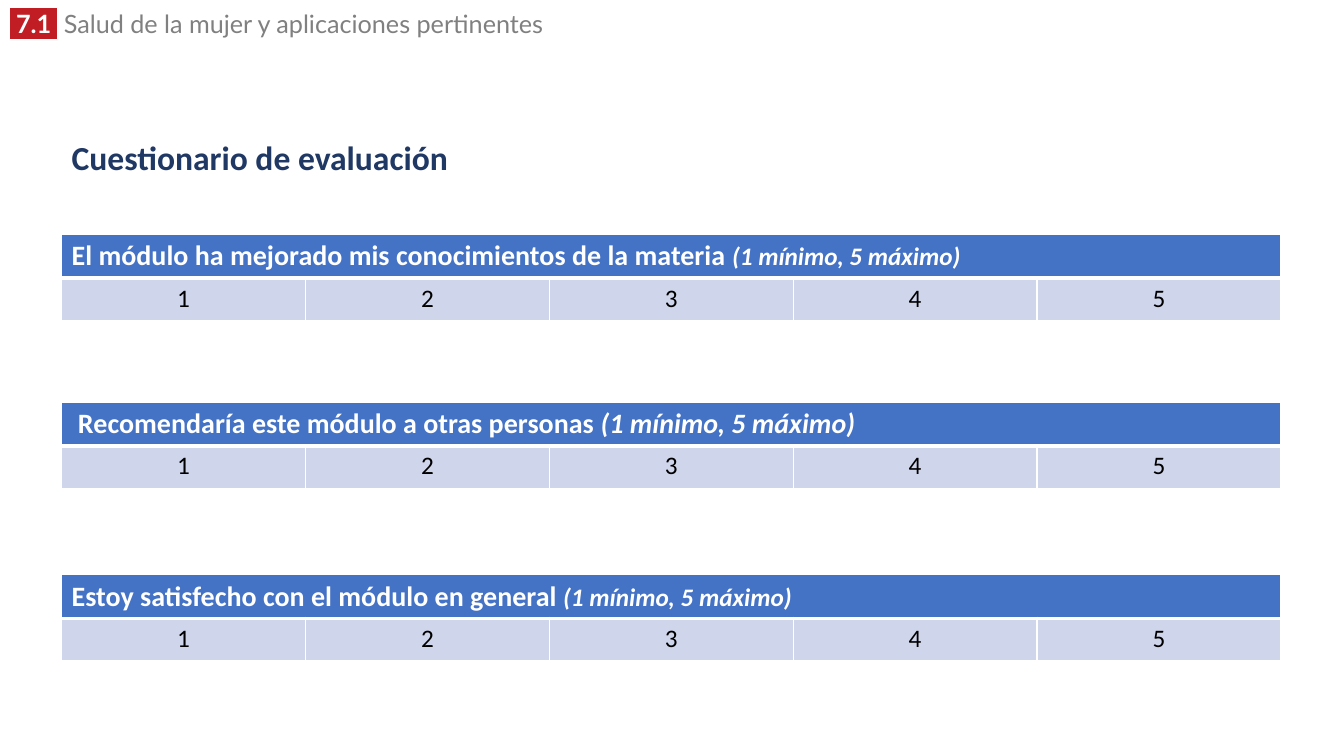
import pptx
import pptx.util
import pptx.dml.color
import pptx.enum.text
import pptx.oxml
import pptx.oxml.ns

Pt = pptx.util.Pt
RGBColor = pptx.dml.color.RGBColor
PP_ALIGN = pptx.enum.text.PP_ALIGN
MSO_ANCHOR = pptx.enum.text.MSO_ANCHOR
MSO_AUTO_SIZE = pptx.enum.text.MSO_AUTO_SIZE

COLORS = {
    "white": "FFFFFF",
    "red": "C01E24",
    "gray": "808080",
    "navy": "203864",
    "blue": "4472C4",
    "pale": "CFD5EA",
    "black": "000000",
}
LEFT, WIDTH = 44, 871
ROW_HEIGHT = 30.24
SCALE = ["1", "2", "3", "4", "5"]
RANGE_HINT = "(1 mínimo, 5 máximo)"
# statement, top, size of the range hint
QUESTIONS = [
    ("El módulo ha mejorado mis conocimientos de la materia ", 167.3, 18),
    (" Recomendaría este módulo a otras personas ", 287.3, 20),
    ("Estoy satisfecho con el módulo en general ", 410.5, 18),
]


def add_run(paragraph, text, size, color, font="Calibri", bold=False, italic=False):
    run = paragraph.add_run()
    run.text = text
    run.font.size = Pt(size)
    run.font.color.rgb = RGBColor.from_string(COLORS[color])
    run.font.name = font
    run.font.bold = bold
    run.font.italic = italic
    return run


def style_cell(cell, color, bottom_width):
    """Fill the cell and give it white borders."""
    cell.fill.solid()
    cell.fill.fore_color.rgb = RGBColor.from_string(COLORS[color])
    properties = cell._tc.get_or_add_tcPr()
    for position, side in enumerate("LRTB"):
        width = Pt(bottom_width if side == "B" else 1)
        properties.insert(position, pptx.oxml.parse_xml(
            f'<a:ln{side} {pptx.oxml.ns.nsdecls("a")} w="{width}"><a:solidFill>'
            f'<a:srgbClr val="{COLORS["white"]}"/></a:solidFill></a:ln{side}>'))


presentation = pptx.Presentation()
presentation.slide_width = Pt(960)
presentation.slide_height = Pt(540)
slide = presentation.slides.add_slide(presentation.slide_layouts[5])

# Section header
header = slide.shapes.add_textbox(Pt(0), Pt(6.5), Pt(453), Pt(25))
header.text_frame.word_wrap = True
paragraph = header.text_frame.paragraphs[0]
paragraph.line_spacing = 0.8
number = add_run(paragraph, " 7.1 ", 18, "white", "Lato", bold=True)
add_run(paragraph, " Salud de la mujer y aplicaciones pertinentes", 18, "gray", "Lato")
text_fill = number._r.rPr.find(pptx.oxml.ns.qn("a:solidFill"))
text_fill.addnext(pptx.oxml.parse_xml(
    f'<a:highlight {pptx.oxml.ns.nsdecls("a")}><a:srgbClr val="{COLORS["red"]}"/></a:highlight>'))

# Title
title = slide.shapes.title
title.left, title.top, title.width, title.height = Pt(LEFT), Pt(85), Pt(WIDTH), Pt(57.6)
title.text_frame.word_wrap = True
title.text_frame.auto_size = MSO_AUTO_SIZE.NONE
title.text_frame.vertical_anchor = MSO_ANCHOR.MIDDLE
paragraph = title.text_frame.paragraphs[0]
paragraph.alignment = PP_ALIGN.LEFT
paragraph.line_spacing = 0.9
add_run(paragraph, "Cuestionario de evaluación", 24, "navy", bold=True)

# One rating table per question
for statement, top, hint_size in QUESTIONS:
    table = slide.shapes.add_table(
        2, len(SCALE), Pt(LEFT), Pt(top), Pt(WIDTH), Pt(2 * ROW_HEIGHT)).table
    for row in table.rows:
        row.height = Pt(ROW_HEIGHT)
    for column, value in enumerate(SCALE):
        style_cell(table.cell(0, column), "blue", 3)
        rating = table.cell(1, column)
        style_cell(rating, "pale", 1)
        rating_paragraph = rating.text_frame.paragraphs[0]
        rating_paragraph.alignment = PP_ALIGN.CENTER
        add_run(rating_paragraph, value, 18, "black")
    heading = table.cell(0, 0)
    heading.merge(table.cell(0, len(SCALE) - 1))
    paragraph = heading.text_frame.paragraphs[0]
    add_run(paragraph, statement, 20, "white", bold=True)
    add_run(paragraph, RANGE_HINT, hint_size, "white", bold=True, italic=True)

presentation.save("out.pptx")
